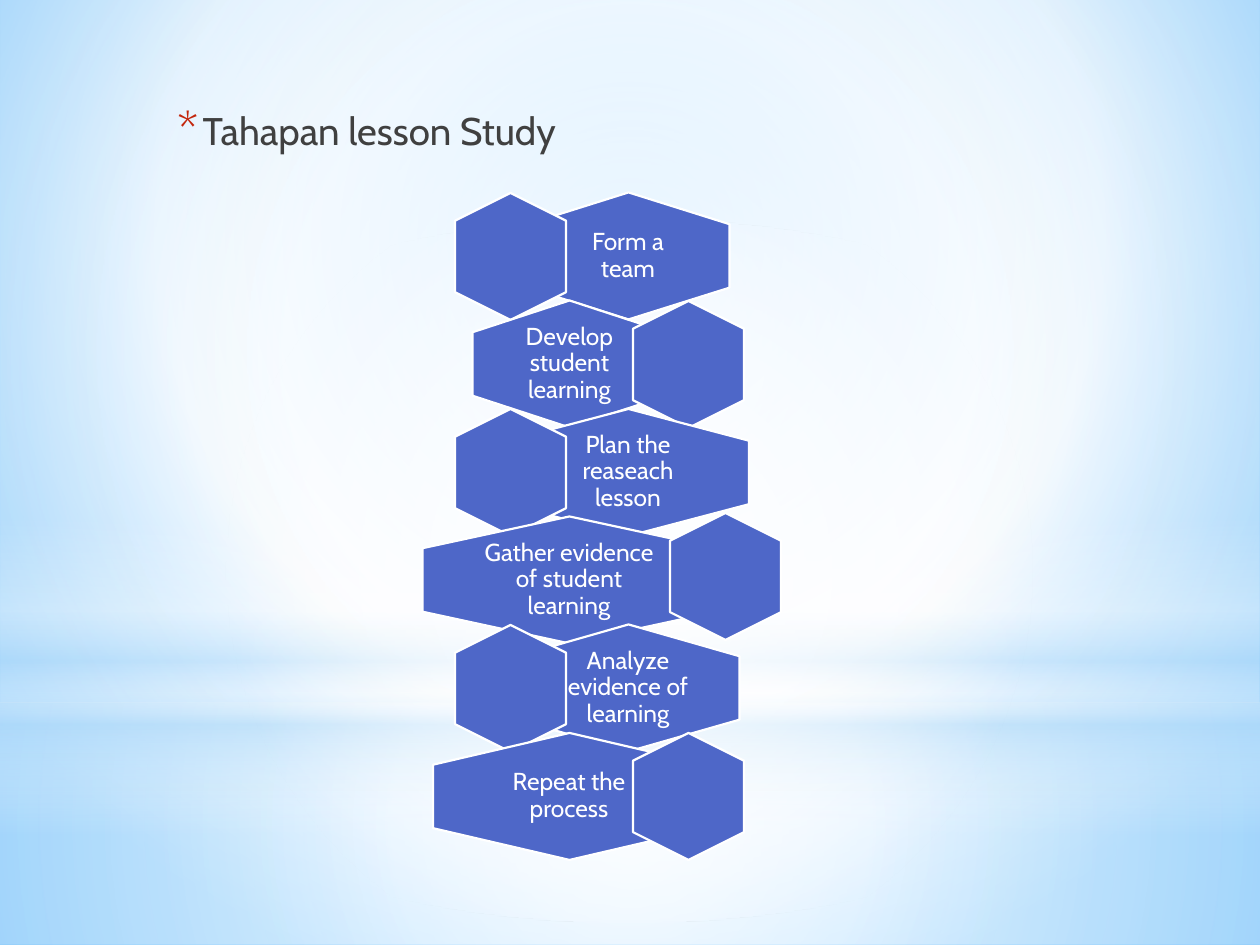
from pptx import Presentation
from pptx.dml.color import RGBColor
from pptx.enum.shapes import MSO_SHAPE as Kind
from pptx.enum.text import MSO_ANCHOR as Anchor, PP_ALIGN as Align
from pptx.oxml import parse_xml
from pptx.oxml.ns import nsdecls, qn
from pptx.util import Pt

PX = 914400 // 126
rgb = RGBColor.from_string


def paint(fill, root, stops, rect):
    fill.gradient()
    grad = next(root.iter(qn("a:gradFill")))
    marks = "".join(
        f'<a:gs pos="{pos * 1000}"><a:srgbClr val="{tone}">'
        f'<a:alpha val="{alpha * 1000}"/></a:srgbClr></a:gs>'
        for pos, tone, alpha in stops)
    if rect:
        sides = " ".join(f'{side}="{val * 1000}"' for side, val in zip("ltrb", rect))
        way = f'<a:path path="circle"><a:fillToRect {sides}/></a:path>'
    else:
        way = '<a:lin ang="5400000" scaled="0"/>'
    grad.getparent().replace(grad, parse_xml(
        f'<a:gradFill {nsdecls("a")} rotWithShape="1">'
        f'<a:gsLst>{marks}</a:gsLst>{way}</a:gradFill>'))


def hexa(group, mid, row, wide, high):
    hexagon = group.shapes.add_shape(
        Kind.HEXAGON, (mid - high // 2) * PX, (row - wide // 2) * PX,
        high * PX, wide * PX)
    hexagon.rotation = 90
    hexagon.adjustments[0] = 0.25
    hexagon.adjustments[1] = 1.1547
    hexagon.shadow.inherit = False
    hexagon.fill.solid()
    hexagon.fill.fore_color.rgb = rgb("4E67C8")
    hexagon.line.color.rgb = rgb("FFFFFF")
    hexagon.line.width = Pt(1.25)


deck = Presentation()
deck.slide_width = 1260 * PX
deck.slide_height = 945 * PX
slide = deck.slides.add_slide(deck.slide_layouts[1])
tree = slide.shapes

paint(slide.background.fill, slide._element,
      [(0, "9ED5FF", 100), (60, "FFFFFF", 100), (100, "5BB9FF", 100)],
      (20, 10, 20, 60))

mid = (50, 50, 50, 50)
layers = [
    (Kind.RECTANGLE, 703, 242, mid,
     [(0, "FFFFFF", 91), (37, "FFFFFF", 76), (100, "B4DCFA", 79)]),
    (Kind.RECTANGLE, 0, 703, mid,
     [(0, "FFFFFF", 89), (48, "FFFFFF", 62), (100, "B4DCFA", 79)]),
    (Kind.RECTANGLE, 519, 315, None,
     [(0, "FFFFFF", 0), (29, "FFFFFF", 30), (45, "B4DCFA", 40),
      (55, "FFFFFF", 26), (65, "B4DCFA", 60), (100, "FFFFFF", 0)]),
    (Kind.OVAL, 220, 703, mid, [(0, "FFFFFF", 100), (56, "FFFFFF", 0)]),
]
for kind, top, high, rect, stops in layers:
    layer = tree.add_shape(kind, 0, top * PX, 1260 * PX, high * PX)
    layer.shadow.inherit = False
    layer.line.fill.background()
    paint(layer.fill, layer._element, stops, rect)

title = tree.title._element
title.getparent().remove(title)
body = slide.placeholders[1]
body._element.getparent().append(body._element)
body.left, body.top = 158 * PX, 101 * PX
body.width, body.height = 1260 * 7 // 10 * PX, 113 * PX
body.text_frame.text = "Tahapan lesson Study"
para = body.text_frame.paragraphs[0]
para.space_after = Pt(3)
font = para.runs[0].font
font.size, font.name = Pt(22), "Cabin"
font.color.rgb = rgb("404040")
props = para._p.get_or_add_pPr()
props.set("marL", str(32 * PX))
props.set("indent", str(-25 * PX))
for mark in ('<a:buClr {}><a:srgbClr val="C3260C"/></a:buClr>',
             '<a:buSzPct {} val="130000"/>',
             '<a:buFont {} typeface="Cabin"/>',
             '<a:buChar {} char="*"/>'):
    props.append(parse_xml(mark.format(nsdecls("a"))))

steps = [
    ("Form a team", 202, 510, 0),
    ("Develop student learning", 194, 688, 0),
    ("Plan the reaseach lesson", 241, 510, 0),
    ("Gather evidence of student learning", 294, 725, -4),
    ("Analyze evidence of learning", 222, 510, 0),
    ("Repeat the process", 273, 688, 0),
]
group = tree.add_group_shape()
for i, (text, wide, side, shift) in enumerate(steps):
    row = 256 + 108 * i
    mid = 569 if i % 2 else 628
    hexa(group, mid, row, wide, 127)
    span = wide * 2 // 3
    box = group.shapes.add_textbox(
        (mid - span // 2) * PX, (row - 42) * PX, span * PX, 84 * PX)
    frame = box.text_frame
    frame.word_wrap = True
    frame.vertical_anchor = Anchor.MIDDLE
    frame.margin_left = frame.margin_right = 8 * PX
    frame.margin_top = frame.margin_bottom = 8 * PX
    frame.text = text
    para = frame.paragraphs[0]
    para.alignment = Align.CENTER
    para.line_spacing = 0.9
    font = para.runs[0].font
    font.size, font.name = Pt(14), "Cabin"
    font.color.rgb = rgb("FFFFFF")
    hexa(group, side, row + shift, 111, 127)

deck.save("out.pptx")
